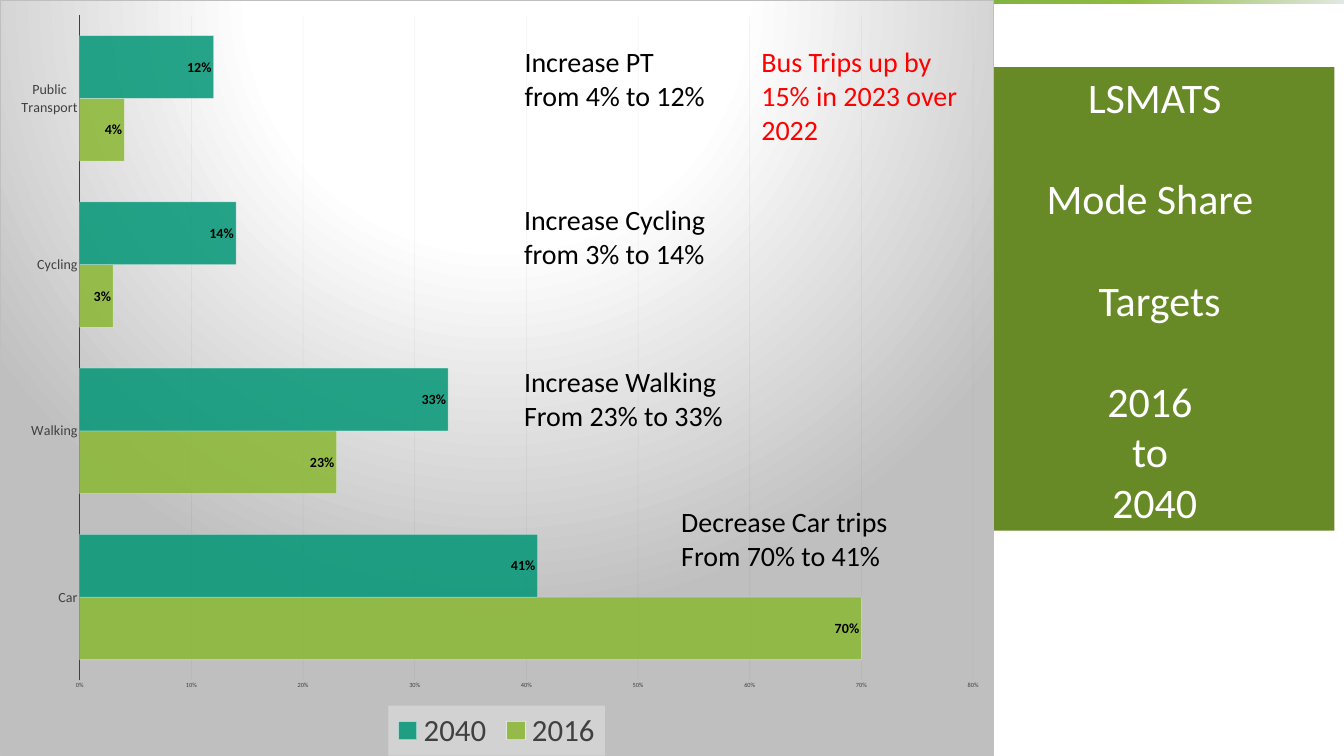
from lxml import etree
from pptx import Presentation
from pptx.chart.data import CategoryChartData
from pptx.dml.color import RGBColor
from pptx.enum.chart import XL_CHART_TYPE, XL_LABEL_POSITION, XL_LEGEND_POSITION, XL_TICK_MARK
from pptx.enum.shapes import MSO_SHAPE
from pptx.enum.text import MSO_ANCHOR, PP_ALIGN
from pptx.oxml import parse_xml
from pptx.oxml.ns import nsdecls, qn
from pptx.util import Inches, Pt

BAR = XL_CHART_TYPE.BAR_CLUSTERED
INSIDE_END = XL_LABEL_POSITION.INSIDE_END
BOTTOM = XL_LEGEND_POSITION.BOTTOM
NO_TICK = XL_TICK_MARK.NONE
RECT = MSO_SHAPE.RECTANGLE
MIDDLE = MSO_ANCHOR.MIDDLE
CENTER = PP_ALIGN.CENTER

FONT = "Calibri"
WHITE = RGBColor(0xFF, 0xFF, 0xFF)
BLACK = RGBColor(0, 0, 0)
RED = RGBColor(0xFF, 0, 0)
PANEL = RGBColor(0x67, 0x8A, 0x26)
DARK = RGBColor(0x40, 0x40, 0x40)
GRID = RGBColor(0x0D, 0x0D, 0x0D)
LIME = RGBColor(0x8A, 0xB8, 0x33)
TEAL = RGBColor(0x02, 0x96, 0x76)

# Content
MODES = ["Car", "Walking", "Cycling", "Public Transport"]
SHARES = [("2016", [0.70, 0.23, 0.03, 0.04], LIME),
          ("2040", [0.41, 0.33, 0.14, 0.12], TEAL)]
TITLE = [("LSMATS", True), ("Mode Share ", True), (" Targets", True),
         ("2016 ", False), ("to ", False), ("2040", False)]  # text, gap after
NOTES = [  # left, top, height, colour, paragraphs
    (10.31, 0.84, 1.45, BLACK, ["Increase PT", "from 4% to 12%"]),
    (15.01, 0.84, 2.12, RED, ["Bus Trips up by 15% in 2023 over 2022"]),
    (10.3, 3.97, 1.45, BLACK, ["Increase Cycling from 3% to 14%"]),
    (10.3, 7.19, 1.45, BLACK, ["Increase Walking", "From 23% to 33%"]),
    (13.42, 9.97, 1.45, BLACK, ["Decrease Car trips", "From 70% to 41%"]),
]
NOTE_WIDTH = 4.39


def style(font, size, color, bold=False):
    font.name, font.size, font.bold = FONT, Pt(size), bold
    font.color.rgb = color


def gradient(stops, direction):
    gs = "".join(f'<a:gs pos="{pos * 1000}"><a:srgbClr val="{c}"/></a:gs>' for pos, c in stops)
    return (f'<a:gradFill {nsdecls("a")} rotWithShape="1"><a:gsLst>{gs}</a:gsLst>'
            f'{direction}</a:gradFill>')


def set_alpha(element, percents):
    """Give the colours inside element their opacity, in document order."""
    for color, percent in zip(element.iter(qn("a:srgbClr")), percents):
        etree.SubElement(color, qn("a:alpha")).set("val", str(percent * 1000))


def add_rect(s, left, top, width, height):
    sp = s.shapes.add_shape(RECT, Inches(left), Inches(top), Inches(width), Inches(height))
    sp.shadow.inherit = False
    sp.line.fill.background()
    return sp


def write(tf, texts, size, color):
    tf.word_wrap = True
    tf.text = "\n".join(texts)
    for p in tf.paragraphs:
        for r in p.runs:
            style(r.font, size, color)


prs = Presentation()
prs.slide_width, prs.slide_height = Inches(26.67), Inches(15)
s = prs.slides.add_slide(prs.slide_layouts[6])

# Gradient strip along the top
strip = add_rect(s, 0, -0.06, 26.67, 0.13)
strip.fill.background()
no_fill = strip.element.spPr.find(qn("a:noFill"))
no_fill.getparent().replace(no_fill, parse_xml(gradient(
    [(0, "0E6C39"), (84, "8EBC40"), (100, "E2E8E3")], '<a:lin ang="2700000" scaled="0"/>')))

# Title panel
panel = add_rect(s, 19.35, 1.33, 7.13, 9.2)
panel.fill.solid()
panel.fill.fore_color.rgb = PANEL
tf = panel.text_frame
tf.vertical_anchor = MIDDLE
tf.margin_left = tf.margin_right = tf.margin_top = tf.margin_bottom = Inches(0.06)
write(tf, [text for text, _ in TITLE], 60, WHITE)
for p, (_, gap) in zip(tf.paragraphs, TITLE):
    p.alignment = CENTER
    if gap:
        p.space_after = Pt(73)

# Mode share chart
data = CategoryChartData(number_format="0%")
data.categories = MODES
for name, values, _ in SHARES:
    data.add_series(name, values)
chart = s.shapes.add_chart(BAR, 0, 0, Inches(19.71), Inches(15), data).chart
chart.has_title = False
style(chart.font, 10, BLACK)

plot = chart.plots[0]
plot.gap_width, plot.overlap, plot.vary_by_categories = 65, 0, False
for series, (_, _, color) in zip(plot.series, SHARES):
    series.format.fill.solid()
    series.format.fill.fore_color.rgb = color
    series.format.line.color.rgb = WHITE
    series.format.line.width = Pt(0.75)
    set_alpha(series.format.fill and series._element.find(qn("c:spPr")), [85, 50])
    labels = series.data_labels
    labels.show_value, labels.position = True, INSIDE_END
    labels.number_format, labels.number_format_is_linked = "0%", False
    style(labels.font, 20, BLACK, bold=True)

# Axes
modes, shares = chart.category_axis, chart.value_axis
for axis, size in ((modes, 20), (shares, 9)):
    axis.major_tick_mark = axis.minor_tick_mark = NO_TICK
    style(axis.tick_labels.font, size, DARK)
modes.format.line.color.rgb = DARK
modes.format.line.width = Pt(1.5)
shares.minimum_scale, shares.maximum_scale, shares.major_unit = 0, 0.8, 0.1
shares.tick_labels.number_format = "0%"
shares.tick_labels.number_format_is_linked = False
shares.format.line.fill.background()
grid = shares.major_gridlines.format.line
grid.color.rgb, grid.width = GRID, Pt(0.75)
set_alpha(chart._chartSpace.find(".//" + qn("c:majorGridlines")), [5])

# Legend on a translucent plate
chart.has_legend = True
legend = chart.legend
legend.position, legend.include_in_layout = BOTTOM, False
style(legend.font, 44, DARK)
legend.font._element.getparent().getparent().getparent().addprevious(parse_xml(
    f'<c:spPr {nsdecls("c", "a")}><a:solidFill><a:srgbClr val="F2F2F2">'
    '<a:alpha val="39000"/></a:srgbClr></a:solidFill></c:spPr>')) \
    if hasattr(legend.font, "_element") else \
    chart._chartSpace.find(".//" + qn("c:legend")).find(qn("c:txPr")).addprevious(parse_xml(
        f'<c:spPr {nsdecls("c", "a")}><a:solidFill><a:srgbClr val="F2F2F2">'
        '<a:alpha val="39000"/></a:srgbClr></a:solidFill></c:spPr>'))

# Plot position and chart background
area = chart._chartSpace.find(".//" + qn("c:plotArea"))
for old in area.findall(qn("c:layout")):
    area.remove(old)
frame = "".join(f'<c:{tag} val="{value}"/>' for tag, value in (
    ("layoutTarget", "inner"), ("xMode", "edge"), ("yMode", "edge"),
    ("x", 0.08), ("y", 0.02), ("w", 0.9), ("h", 0.88)))
area.insert(0, parse_xml(
    f'<c:layout {nsdecls("c")}><c:manualLayout>{frame}</c:manualLayout></c:layout>'))
backdrop = gradient([(0, "FFFFFF"), (39, "FFFFFF"), (100, "BFBFBF")],
                    '<a:path path="circle"><a:fillToRect l="50000" t="-80000" '
                    'r="50000" b="180000"/></a:path>')
chart._chartSpace.find(qn("c:chart")).addnext(parse_xml(
    f'<c:spPr {nsdecls("c", "a")}>{backdrop}<a:ln w="9525"><a:solidFill>'
    '<a:srgbClr val="BFBFBF"/></a:solidFill></a:ln></c:spPr>'))

# Notes beside the bars
for left, top, height, color, texts in NOTES:
    box = s.shapes.add_textbox(Inches(left), Inches(top), Inches(NOTE_WIDTH), Inches(height))
    write(box.text_frame, texts, 40, color)

prs.save("out.pptx")
